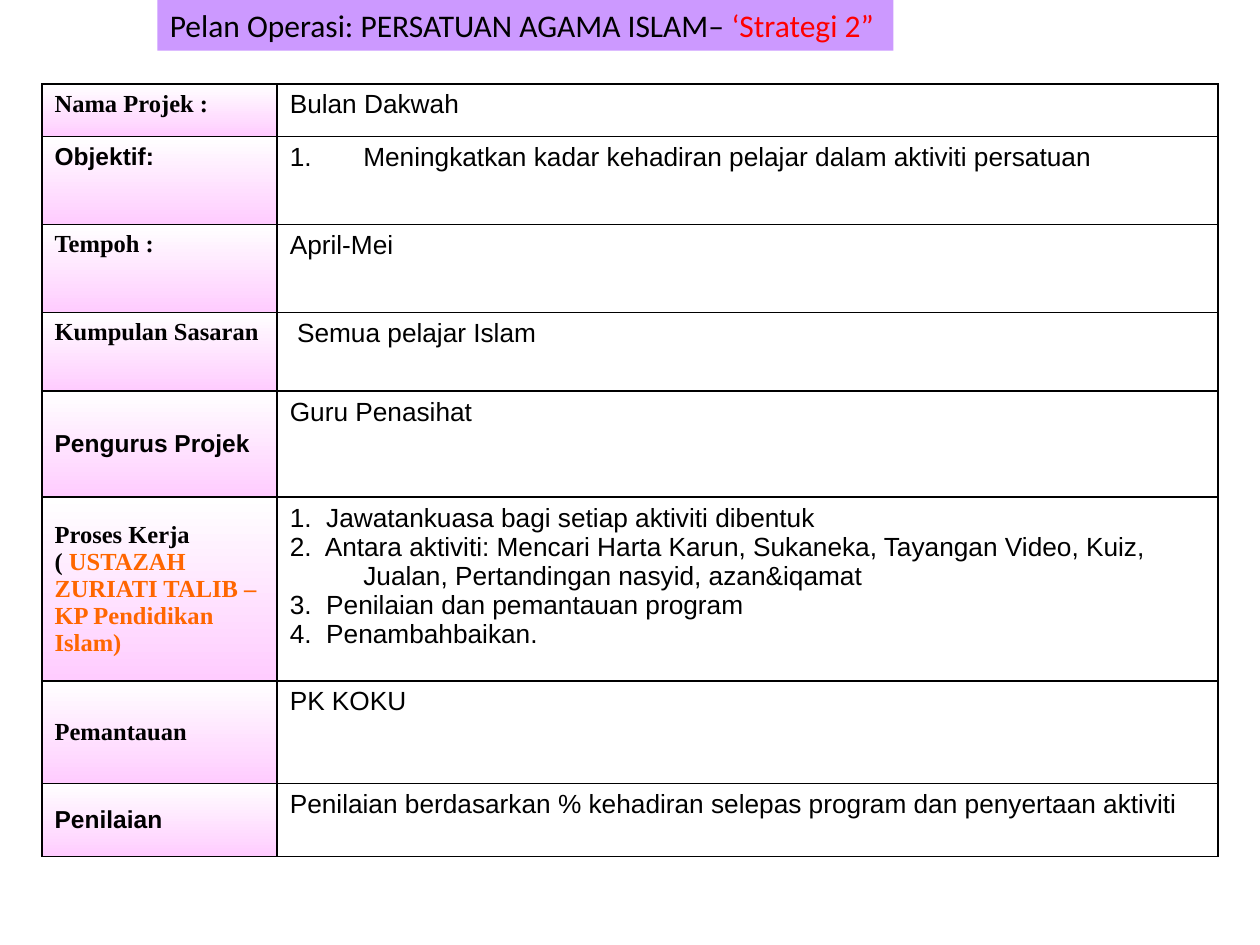
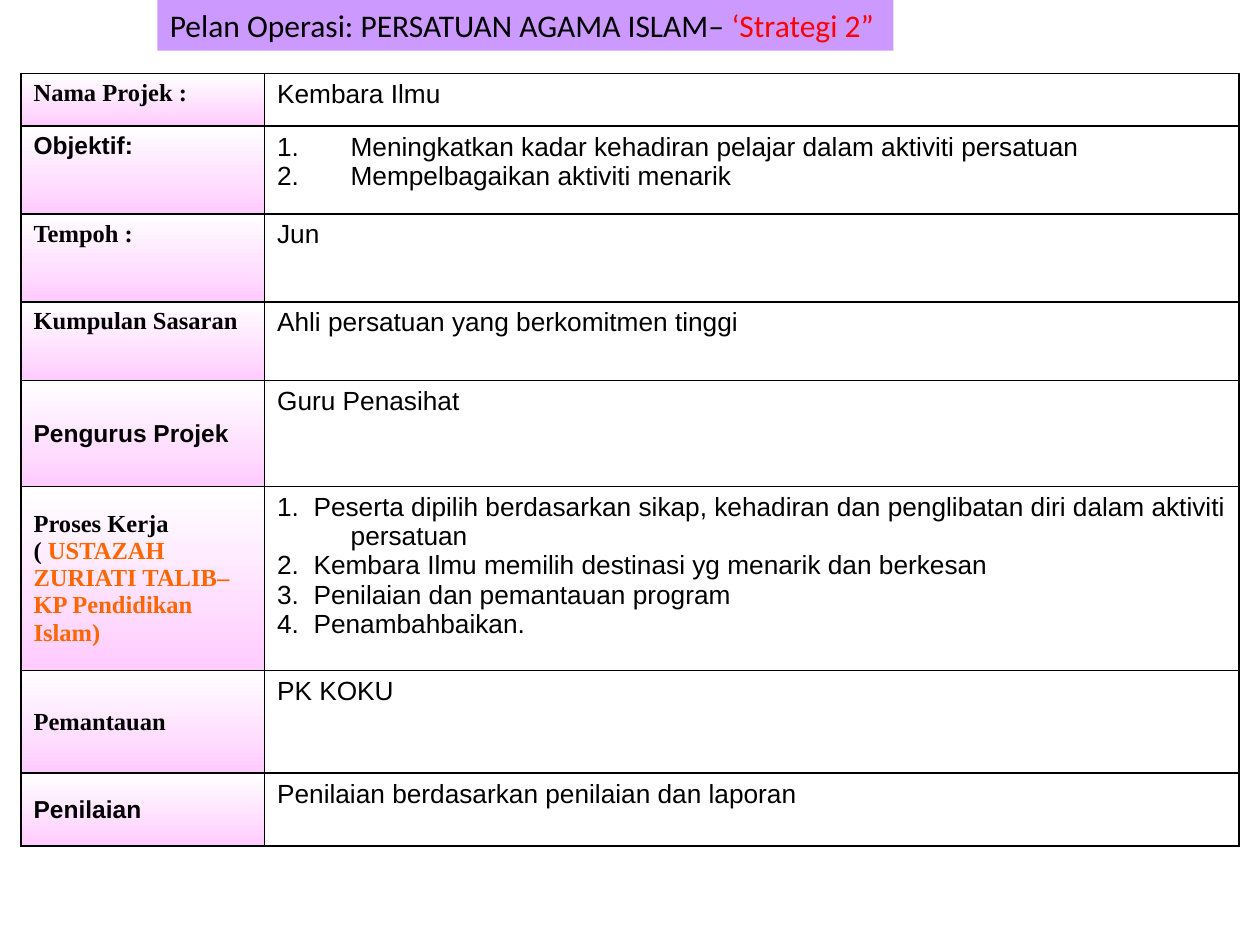
from lxml.etree import SubElement
from pptx import Presentation
from pptx.dml.color import RGBColor
from pptx.enum.text import MSO_ANCHOR, MSO_AUTO_SIZE
from pptx.oxml.ns import qn
from pptx.util import Pt

COLORS = {
    "black": "000000", "white": "FFFFFF", "pink": "FFCCFF",
    "purple": "CC99FF", "red": "FF0000", "orange": "FF6600",
}
SERIF, SANS, TITLE_FONT = "Times New Roman", "Arial", "Calibri"
HANGING_INDENT = Pt(42)
TOP, MIDDLE = MSO_ANCHOR.TOP, MSO_ANCHOR.MIDDLE

# Label, font, vertical anchor and height of each row
ROWS = [
    ("Nama Projek :", SERIF, TOP, 30),
    ("Objektif:", SANS, TOP, 50.25),
    ("Tempoh :", SERIF, TOP, 50.25),
    ("Kumpulan Sasaran", SERIF, TOP, 45.1),
    ("Pengurus Projek", SANS, MIDDLE, 60.5),
    ("Proses Kerja", SERIF, MIDDLE, 105.1),
    ("Pemantauan", SERIF, MIDDLE, 58.6),
    ("Penilaian", SANS, MIDDLE, 41.7),
]

# One entry per slide; values follow the order of ROWS
PLANS = [
    {
        "left": 24, "top": 48, "columns": (134.4, 537.6),
        "leader": "USTAZAH ZURIATI TALIB – KP Pendidikan Islam)",
        "values": [
            ["Bulan Dakwah"],
            ["Meningkatkan kadar kehadiran pelajar dalam aktiviti persatuan"],
            ["April-Mei"],
            [" Semua pelajar Islam"],
            ["Guru Penasihat"],
            ["1.  Jawatankuasa bagi setiap aktiviti dibentuk",
             "2.  Antara aktiviti: Mencari Harta Karun, Sukaneka, Tayangan Video, "
             "Kuiz, Jualan, Pertandingan nasyid, azan&iqamat",
             "3.  Penilaian dan pemantauan program",
             "4.  Penambahbaikan."],
            ["PK KOKU"],
            ["Penilaian berdasarkan % kehadiran selepas program dan penyertaan aktiviti"],
        ],
    },
    {
        "left": 12, "top": 42, "columns": (139.2, 556.8),
        "leader": "USTAZAH ZURIATI TALIB– KP Pendidikan Islam)",
        "values": [
            ["Kembara Ilmu"],
            ["Meningkatkan kadar kehadiran pelajar dalam aktiviti persatuan",
             "Mempelbagaikan aktiviti menarik"],
            ["Jun"],
            ["Ahli persatuan yang berkomitmen tinggi"],
            ["Guru Penasihat"],
            ["1.  Peserta dipilih berdasarkan sikap, kehadiran dan penglibatan "
             "diri dalam aktiviti persatuan",
             "2.  Kembara Ilmu memilih destinasi yg menarik dan berkesan",
             "3.  Penilaian dan pemantauan program",
             "4.  Penambahbaikan."],
            ["PK KOKU"],
            ["Penilaian berdasarkan penilaian dan laporan"],
        ],
    },
]


def add_run(paragraph, text, font, size, color="black", bold=False):
    run = paragraph.add_run()
    run.text = text
    run.font.name = font
    run.font.size = Pt(size)
    run.font.bold = bold
    run.font.color.rgb = RGBColor.from_string(COLORS[color])


def add_borders(cell):
    properties = cell._tc.get_or_add_tcPr()
    for side in ("a:lnL", "a:lnR", "a:lnT", "a:lnB"):
        line = SubElement(properties, qn(side), w=str(Pt(1)))
        fill = SubElement(line, qn("a:solidFill"))
        SubElement(fill, qn("a:srgbClr"), val=COLORS["black"])


presentation = Presentation()
presentation.slide_width = Pt(720)
presentation.slide_height = Pt(540)

for plan in PLANS:
    slide = presentation.slides.add_slide(presentation.slide_layouts[6])

    # Project table
    table = slide.shapes.add_table(
        len(ROWS), 2, Pt(plan["left"]), Pt(plan["top"]),
        Pt(sum(plan["columns"])), Pt(sum(row[3] for row in ROWS))).table
    table.first_row = False
    table.horz_banding = False
    for column, width in zip(table.columns, plan["columns"]):
        column.width = Pt(width)

    for index, (label, font, anchor, height) in enumerate(ROWS):
        table.rows[index].height = Pt(height)
        label_cell, value_cell = table.cell(index, 0), table.cell(index, 1)
        add_borders(label_cell)
        add_borders(value_cell)

        # Label on a white to pink gradient
        label_cell.vertical_anchor = anchor
        label_cell.fill.gradient()
        label_cell.fill.gradient_angle = 270
        for stop, color in zip(label_cell.fill.gradient_stops, ("white", "pink")):
            stop.color.rgb = RGBColor.from_string(COLORS[color])
        add_run(label_cell.text_frame.paragraphs[0], label, font, 14, bold=True)
        if label == "Proses Kerja":
            paragraph = label_cell.text_frame.add_paragraph()
            add_run(paragraph, "( ", font, 14, bold=True)
            add_run(paragraph, plan["leader"], font, 14, "orange", bold=True)

        # Value, one paragraph per item
        value_cell.fill.background()
        frame = value_cell.text_frame
        for position, text in enumerate(plan["values"][index]):
            paragraph = frame.add_paragraph() if position else frame.paragraphs[0]
            add_run(paragraph, text, SANS, 15)
            if label in ("Objektif:", "Pengurus Projek", "Proses Kerja"):
                properties = paragraph._p.get_or_add_pPr()
                properties.set("marL", str(HANGING_INDENT))
                properties.set("indent", str(-HANGING_INDENT))
                if label == "Objektif:":
                    SubElement(properties, qn("a:buFontTx"))
                    SubElement(properties, qn("a:buAutoNum"), type="arabicPeriod")

    # Title band
    title = slide.shapes.add_textbox(Pt(90), Pt(0), Pt(420.5), Pt(29))
    title.fill.solid()
    title.fill.fore_color.rgb = RGBColor.from_string(COLORS["purple"])
    title.text_frame.word_wrap = False
    title.text_frame.auto_size = MSO_AUTO_SIZE.SHAPE_TO_FIT_TEXT
    paragraph = title.text_frame.paragraphs[0]
    add_run(paragraph, "Pelan Operasi: PERSATUAN AGAMA ISLAM– ", TITLE_FONT, 18)
    add_run(paragraph, "‘Strategi 2”", TITLE_FONT, 18, "red")

presentation.save("out.pptx")
